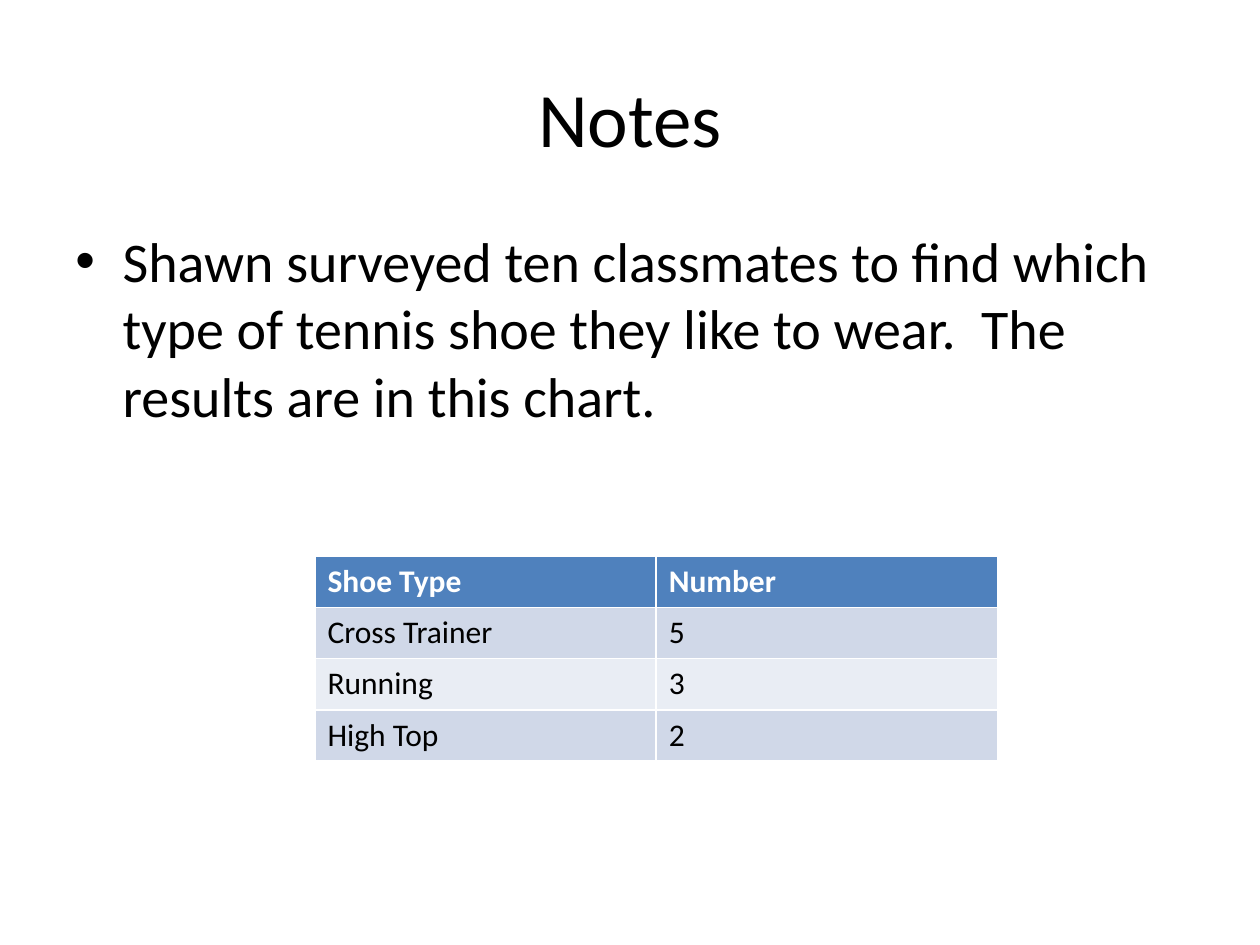
from lxml import etree
from pptx import Presentation
from pptx.dml.color import RGBColor
from pptx.enum.text import MSO_ANCHOR, PP_ALIGN
from pptx.oxml.ns import qn
from pptx.util import Pt

CENTER, LEFT = PP_ALIGN.CENTER, PP_ALIGN.LEFT
MIDDLE, TOP = MSO_ANCHOR.MIDDLE, MSO_ANCHOR.TOP
FONT = "Calibri"
COLORS = {"text": "000000", "header_text": "FFFFFF", "header": "4F81BD",
          "band_dark": "D0D8E8", "band_light": "E9EDF4"}


def style(p, size, color, bold=False):
    p.font.name = FONT
    p.font.size = Pt(size)
    p.font.bold = bold
    p.font.color.rgb = RGBColor.from_string(COLORS[color])


def add_text(s, text, top, height, size, align, anchor):
    tf = s.shapes.add_textbox(Pt(36), Pt(top), Pt(648), Pt(height)).text_frame
    tf.word_wrap = True
    tf.vertical_anchor = anchor
    p = tf.paragraphs[0]
    p.text = text
    p.alignment = align
    style(p, size, "text")
    return p


prs = Presentation()
prs.slide_width, prs.slide_height = Pt(720), Pt(540)
s = prs.slides.add_slide(prs.slide_layouts[6])

# Title
add_text(s, "Notes", 21.6, 90, 44, CENTER, MIDDLE)

# Bulleted body with a hanging indent
p = add_text(s, "Shawn surveyed ten classmates to find which type of tennis shoe "
             "they like to wear.  The results are in this chart.",
             126, 356.4, 32, LEFT, TOP)
pPr = p._p.get_or_add_pPr()
pPr.set("marL", str(Pt(27)))
pPr.set("indent", str(Pt(-27)))
bullet_font = etree.Element(qn("a:buFont"), typeface="Arial")
bullet = etree.Element(qn("a:buChar"), char="•")
pPr.insert(0, bullet_font)
bullet_font.addnext(bullet)

# Survey table; the default table style draws the white borders
rows = [("Shoe Type", "Number"), ("Cross Trainer", "5"),
        ("Running", "3"), ("High Top", "2")]
fills = ["header", "band_dark", "band_light", "band_dark"]
table = s.shapes.add_table(len(rows), 2, Pt(180), Pt(318),
                           Pt(390), Pt(116.8)).table
for i, (row, fill) in enumerate(zip(rows, fills)):
    table.rows[i].height = Pt(29.2)
    for j, text in enumerate(row):
        cell = table.cell(i, j)
        cell.fill.solid()
        cell.fill.fore_color.rgb = RGBColor.from_string(COLORS[fill])
        p = cell.text_frame.paragraphs[0]
        p.text = text
        style(p, 18, "text" if i else "header_text", bold=i == 0)

prs.save("out.pptx")
